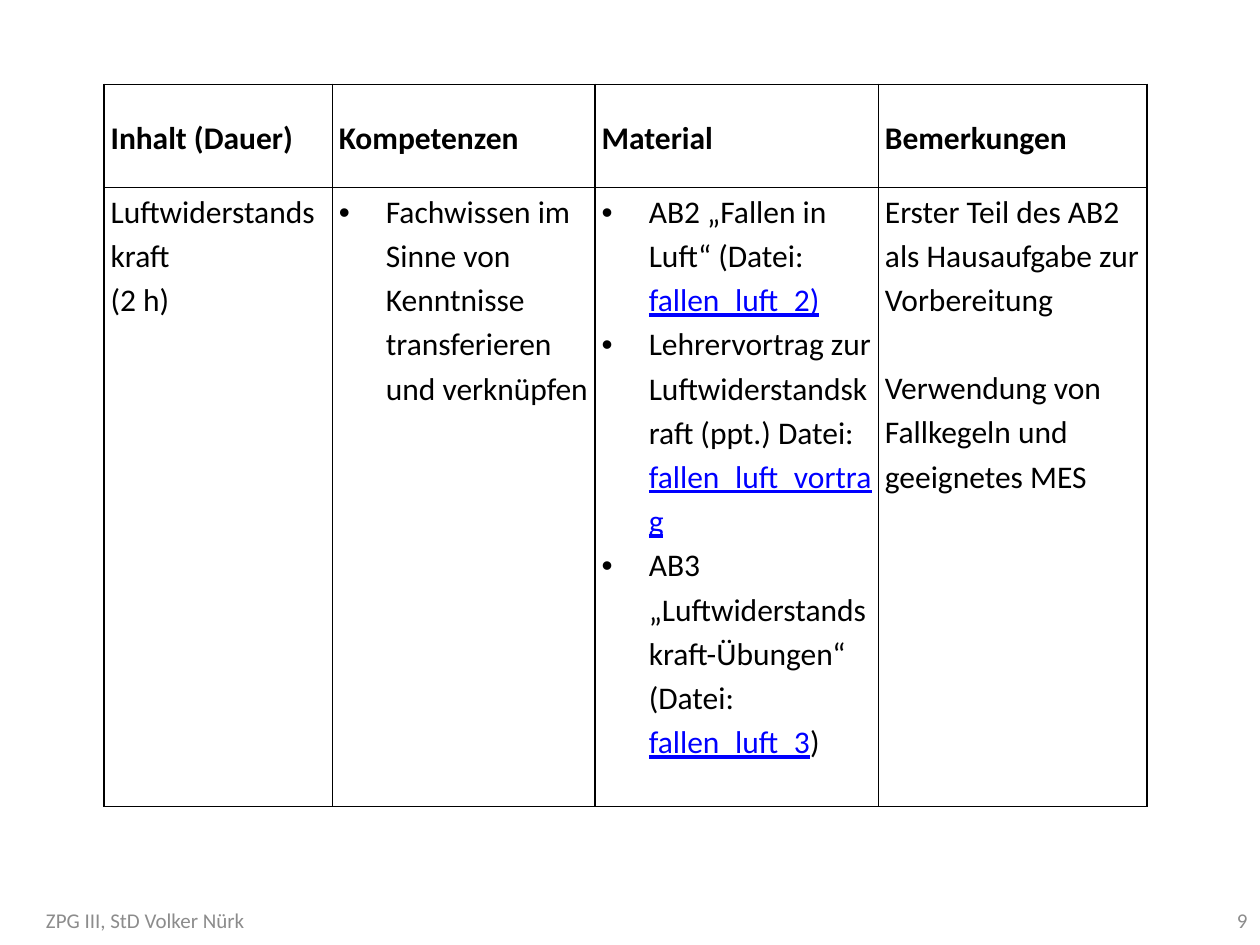
from dataclasses import dataclass

from lxml.etree import SubElement, fromstring
from pptx import Presentation
from pptx.dml.color import RGBColor
from pptx.enum.text import MSO_ANCHOR, PP_ALIGN
from pptx.oxml.ns import nsdecls, qn
from pptx.util import Cm, Pt


@dataclass(frozen=True)
class Theme:
    font: str = "Calibri"
    text: str = "000000"
    link: str = "0000FF"
    muted: str = "8C8C8C"
    body_size: int = 18
    footer_size: int = 12
    line_spacing: float = 1.15
    border_width: int = 1


@dataclass(frozen=True)
class Para:
    texts: tuple  # plain and link text in turn
    bullet: bool = False
    gap: int = 0  # points above


class SlideBuilder:
    def __init__(self, slide, theme):
        self.s = slide
        self.theme = theme

    def style(self, r, size, color, bold=False):
        r.font.name = self.theme.font
        r.font.size = Pt(size)
        r.font.bold = bold
        r.font.color.rgb = RGBColor.from_string(color)

    def paragraph(self, p, para, bold=False):
        p.line_spacing = self.theme.line_spacing
        p.space_before = Pt(para.gap)
        if para.bullet:
            pPr = p._p.get_or_add_pPr()
            pPr.set("marL", str(Cm(0.95)))
            pPr.set("indent", str(-Cm(0.95)))
            SubElement(pPr, qn("a:buFont")).set("typeface", "Arial")
            SubElement(pPr, qn("a:buChar")).set("char", "•")
        for i, text in enumerate(para.texts):
            is_link = i % 2 == 1
            r = p.add_run()
            r.text = text
            color = self.theme.link if is_link else self.theme.text
            self.style(r, self.theme.body_size, color, bold)
            r.font.underline = is_link

    def cell(self, cell, paras, bold=False, anchor=MSO_ANCHOR.TOP, top=0):
        cell.fill.background()
        cell.margin_left = cell.margin_right = Cm(0.13)
        cell.margin_top, cell.margin_bottom = Cm(top), 0
        cell.vertical_anchor = anchor
        tcPr = cell._tc.get_or_add_tcPr()
        for i, side in enumerate(("lnL", "lnR", "lnT", "lnB")):
            tcPr.insert(i, fromstring(
                f'<a:{side} {nsdecls("a")} w="{Pt(self.theme.border_width)}">'
                f'<a:solidFill><a:srgbClr val="{self.theme.text}"/></a:solidFill>'
                f'</a:{side}>'))
        tf = cell.text_frame
        for i, para in enumerate(paras):
            p = tf.add_paragraph() if i else tf.paragraphs[0]
            self.paragraph(p, para, bold)

    def table(self, left, top, widths, heights):
        table = self.s.shapes.add_table(
            len(heights), len(widths), Cm(left), Cm(top),
            Cm(sum(widths)), Cm(sum(heights))).table
        table.first_row = table.horz_banding = False
        for col, width in zip(table.columns, widths):
            col.width = Cm(width)
        for row, height in zip(table.rows, heights):
            row.height = Cm(height)
        return table

    def footer(self, text, left, width, align):
        sp = self.s.shapes.add_textbox(Cm(left), Cm(18.03), Cm(width), Cm(1.02))
        tf = sp.text_frame
        tf.word_wrap = True
        tf.vertical_anchor = MSO_ANCHOR.MIDDLE
        tf.text = text
        p = tf.paragraphs[0]
        p.alignment = align
        self.style(p.runs[0], self.theme.footer_size, self.theme.muted)


HEADINGS = ("Inhalt (Dauer)", "Kompetenzen", "Material", "Bemerkungen")
CONTENT = (
    (Para(("Luftwiderstandskraft",)), Para(("(2 h)",))),
    (Para(("Fachwissen im Sinne von Kenntnisse transferieren und verknüpfen",),
          bullet=True),),
    (Para(("AB2 „Fallen in Luft“ (Datei: ", "fallen_luft_2)"), bullet=True),
     Para(("Lehrervortrag zur Luftwiderstandskraft (ppt.) Datei: ",
           "fallen_luft_vortrag"), bullet=True),
     Para(("AB3 „Luftwiderstandskraft-Übungen“ (Datei: ",
           "fallen_luft_3", ")"), bullet=True)),
    (Para(("Erster Teil des AB2 als Hausaufgabe zur Vorbereitung",)),
     Para(("Verwendung von Fallkegeln und geeignetes MES",), gap=25)),
)


def main():
    prs = Presentation()
    prs.slide_width, prs.slide_height = Cm(25.4), Cm(19.05)
    builder = SlideBuilder(prs.slides.add_slide(prs.slide_layouts[6]), Theme())

    # Lesson plan table
    table = builder.table(2.1, 1.7, (4.6, 5.3, 5.71, 5.41), (2.08, 12.48))
    for col, (heading, paras) in enumerate(zip(HEADINGS, CONTENT)):
        # The competence heading hangs from the top of its cell
        hangs = heading == "Kompetenzen"
        builder.cell(table.cell(0, col), (Para((heading,)),), bold=True,
                     anchor=MSO_ANCHOR.TOP if hangs else MSO_ANCHOR.MIDDLE,
                     top=0.59 if hangs else 0)
        builder.cell(table.cell(1, col), paras)

    # Footer and page number
    builder.footer("ZPG III, StD Volker Nürk", -1.1, 8.06, PP_ALIGN.CENTER)
    builder.footer("9", 19.48, 5.92, PP_ALIGN.RIGHT)

    prs.save("out.pptx")


if __name__ == "__main__":
    main()
